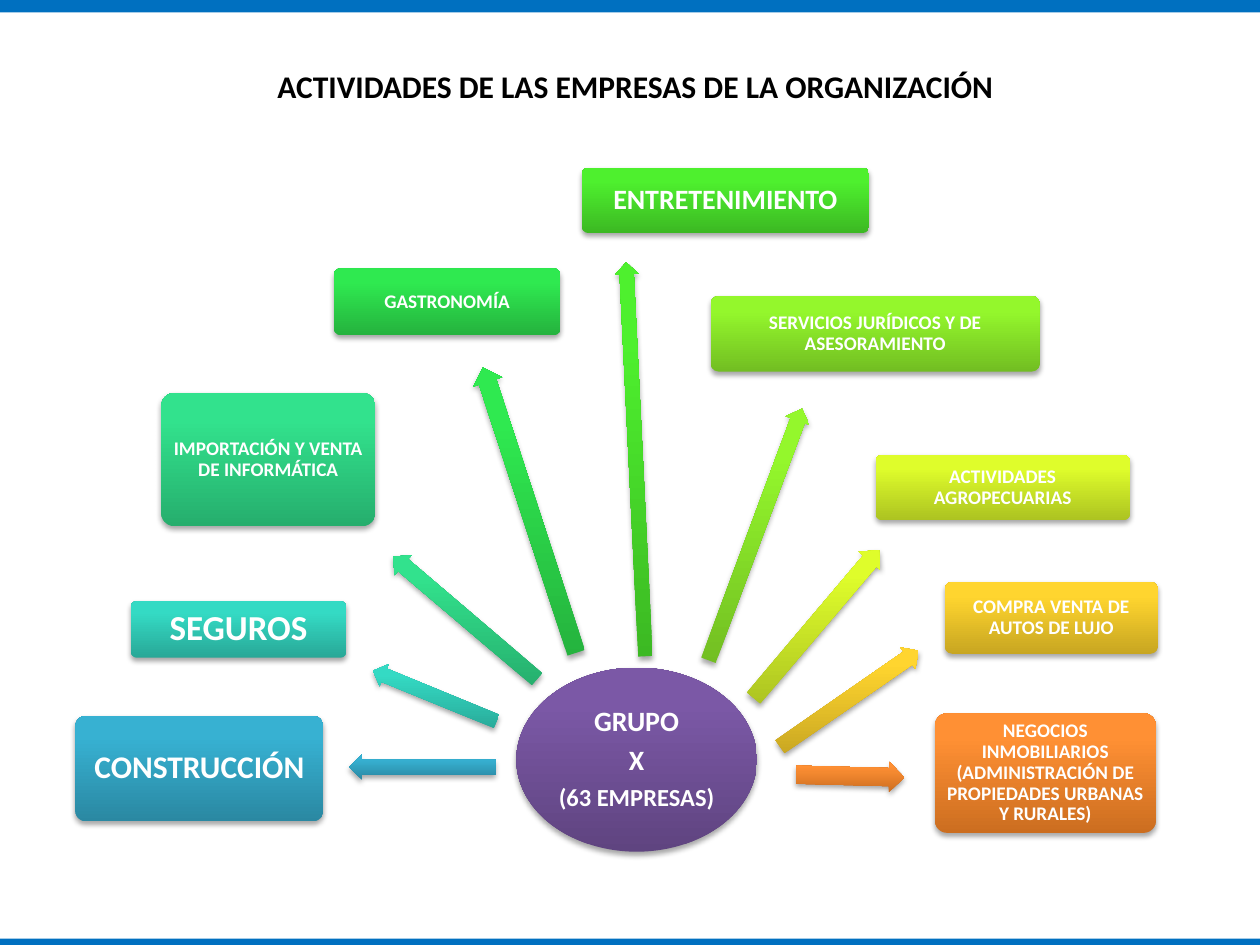
from lxml import etree
from pptx import Presentation
from pptx.dml.color import RGBColor
from pptx.enum import shapes, text
from pptx.oxml import ns
from pptx.util import Cm, Pt

TITLE = "ACTIVIDADES DE LAS EMPRESAS DE LA ORGANIZACIÓN"
BAR_TOPS = [-0.08, 18.92]
HUB = {
    "place": (10.41, 13.46, 4.85, 3.71),
    "lines": [("GRUPO", 16), ("X", 16), ("(63 EMPRESAS)", 14)],
    "colors": ("5F4480", "7B58A6"),
}
# label, size, box place, arrow place, arrow rotation, dark and light colours
ACTIVITIES = [
    ("CONSTRUCCIÓN", 18, (1.52, 14.43, 5, 2.13),
     (7.04, 15.21, 2.95, 0.51), 0, ("2A88A2", "37B1D2")),
    ("SEGUROS", 20, (2.64, 12.12, 4.34, 1.14),
     (7.42, 13.79, 2.69, 0.48), 22.3, ("28A897", "34DAC4")),
    ("IMPORTACIÓN Y VENTA DE INFORMÁTICA", 11, (3.25, 7.92, 4.32, 2.69),
     (7.47, 12.19, 3.81, 0.53), 40.4, ("26AE6D", "32E28D")),
    ("GASTRONOMÍA", 11, (6.73, 5.41, 4.57, 1.35),
     (7.65, 9.98, 6.05, 0.61), 71.9, ("25B33E", "2FE950")),
    ("ENTRETENIMIENTO", 16, (11.73, 3.38, 5.79, 1.32),
     (8.84, 9.02, 7.95, 0.48), 87.2, ("3CB923", "4EF02E")),
    ("SERVICIOS JURÍDICOS Y DE ASESORAMIENTO", 11, (14.33, 5.97, 6.63, 1.52),
     (12.52, 10.52, 5.41, 0.51), 110.4, ("72BE22", "94F72C")),
    ("ACTIVIDADES AGROPECUARIAS", 11, (17.65, 9.17, 5.13, 1.32),
     (14.5, 12.29, 3.91, 0.58), 130.3, ("ACC321", "DFFD2B")),
    ("COMPRA VENTA DE AUTOS DE LUJO", 11, (19.05, 11.73, 4.29, 1.45),
     (15.42, 13.82, 3.4, 0.53), 145.3, ("C8A621", "FFD52F")),
    ("NEGOCIOS INMOBILIARIOS (ADMINISTRACIÓN DE PROPIEDADES URBANAS Y RURALES)",
     11, (18.85, 14.38, 4.45, 2.41),
     (16.05, 15.34, 2.18, 0.61), 181.5, ("CC6E20", "FF9034")),
]
SHADOW = (
    f'<a:outerShdw {ns.nsdecls("a")} blurRad="{Pt(3.1)}" dist="{Pt(1.8)}" '
    'dir="5400000" rotWithShape="0"><a:srgbClr val="000000">'
    '<a:alpha val="35000"/></a:srgbClr></a:outerShdw>'
)


def color(value):
    return RGBColor.from_string(value)


def add_shape(page, kind, place):
    shape = page.shapes.add_shape(kind, *map(Cm, place))
    shape.shadow.inherit = False
    shape.line.fill.background()
    return shape


def add_glossy(page, kind, place, colors):
    shape = add_shape(page, kind, place)
    shape.fill.gradient()
    shape.fill.gradient_angle = 90
    for stop, position, value in zip(shape.fill.gradient_stops, (0, 0.8), colors):
        stop.position = position
        stop.color.rgb = color(value)
    properties = shape._element.spPr
    properties.find(ns.qn("a:gradFill")).set("rotWithShape", "0")
    properties.find(ns.qn("a:effectLst")).append(etree.fromstring(SHADOW))
    return shape


def style(para, words, size, value, spacing):
    para.text = words
    para.alignment = text.PP_ALIGN.CENTER
    para.line_spacing = spacing
    para.font.name = "Calibri"
    para.font.size = Pt(size)
    para.font.bold = True
    para.font.color.rgb = color(value)


def write(shape, lines, inset):
    frame = shape.text_frame
    frame.word_wrap = True
    frame.vertical_anchor = text.MSO_ANCHOR.MIDDLE
    frame.margin_left = frame.margin_right = Cm(inset)
    frame.margin_top = frame.margin_bottom = Cm(inset)
    for index, (words, size) in enumerate(lines):
        para = frame.add_paragraph() if index else frame.paragraphs[0]
        style(para, words, size, "FFFFFF", 0.9)
        para.space_after = Pt(round(size * 0.31, 1))


def main():
    deck = Presentation()
    deck.slide_width, deck.slide_height = Cm(25.4), Cm(19.05)
    page = deck.slides.add_slide(deck.slide_layouts[6])
    kinds = shapes.MSO_SHAPE

    for top in BAR_TOPS:
        bar = add_shape(page, kinds.RECTANGLE, (-0.1, top, 25.7, 0.33))
        bar.fill.solid()
        bar.fill.fore_color.rgb = color("0070C0")

    hub = add_glossy(page, kinds.OVAL, HUB["place"], HUB["colors"])
    write(hub, HUB["lines"], 0.03)

    for label, size, box_place, arrow_place, rotation, colors in ACTIVITIES:
        arrow = add_glossy(page, kinds.LEFT_ARROW, arrow_place, colors)
        arrow.adjustments[0] = 0.6
        arrow.rotation = rotation
        box = add_glossy(page, kinds.ROUNDED_RECTANGLE, box_place, colors)
        box.adjustments[0] = 0.1
        write(box, [(label, size)], round(size * 0.0055, 2))

    title = page.shapes.add_textbox(Cm(4.95), Cm(0.84), Cm(15.72), Cm(1.3))
    title.text_frame.word_wrap = True
    title.text_frame.auto_size = text.MSO_AUTO_SIZE.SHAPE_TO_FIT_TEXT
    style(title.text_frame.paragraphs[0], TITLE, 18, "000000", 1.5)

    deck.save("out.pptx")


if __name__ == "__main__":
    main()
